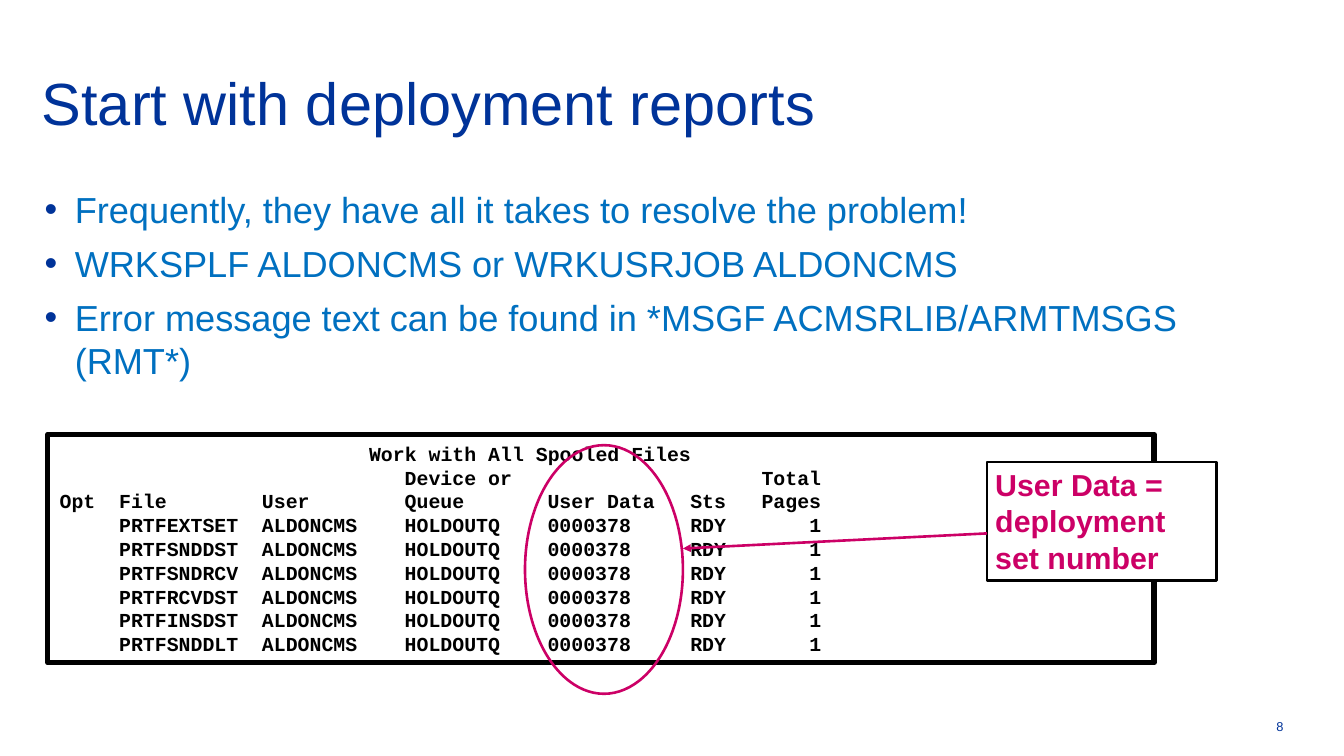
from pptx import Presentation, util as u
from pptx.dml.color import RGBColor
from pptx.enum import shapes, text
from pptx.oxml.ns import qn
from lxml import etree

NAVY, BLUE, PINK, BLACK, WHITE = "003399", "0070C0", "CC0066", "000000", "FFFFFF"
INSETS = {"margin_left": 0.14, "margin_right": 0.14, "margin_top": 0.07, "margin_bottom": 0.07}
CHARACTER = 17 * 0.6 / 72  # width of one Courier New letter at 17 pt, in inches
COLUMNS = [(5, "l"), (17, "l"), (29, "l"), (41, "l"), (53, "l"), (64, "r")]
FILES = ["PRTFEXTSET", "PRTFSNDDST", "PRTFSNDRCV", "PRTFRCVDST", "PRTFINSDST", "PRTFSNDDLT"]
BULLETS = [
    "Frequently, they have all it takes to resolve the problem!",
    "WRKSPLF ALDONCMS or WRKUSRJOB ALDONCMS",
    "Error message text can be found in *MSGF ACMSRLIB/ARMTMSGS (RMT*)",
]


def color(hex_value):
    return RGBColor.from_string(hex_value)


def set_font(paragraph, hex_value, **values):
    for name, value in values.items():
        setattr(paragraph.font, name, value)
    paragraph.font.color.rgb = color(hex_value)


def set_frame(shape, insets=None, anchor=text.MSO_ANCHOR.TOP):
    frame = shape.text_frame
    frame.word_wrap = True
    frame.vertical_anchor = anchor
    for name, value in (insets or {}).items():
        setattr(frame, name, u.Inches(value))
    return frame


def add_text_box(slide, box, **frame_values):
    return set_frame(slide.shapes.add_textbox(*map(u.Inches, box)), **frame_values)


def add_outline(slide, kind, box, line, width, fill=None):
    shape = slide.shapes.add_shape(kind, *map(u.Inches, box))
    shape.shadow.inherit = False
    if fill:
        shape.fill.solid()
        shape.fill.fore_color.rgb = color(fill)
    else:
        shape.fill.background()
    shape.line.color.rgb = color(line)
    shape.line.width = u.Pt(width)
    return shape


def add_tabs(paragraph, stops):
    tabs = etree.SubElement(paragraph._p.get_or_add_pPr(), qn("a:tabLst"))
    for column, align in stops:
        position = u.Inches(column * CHARACTER)
        etree.SubElement(tabs, qn("a:tab"), pos=str(position), algn=align)


def add_bullet(paragraph, hex_value):
    properties = paragraph._p.get_or_add_pPr()
    properties.set("marL", str(u.Inches(0.36)))
    properties.set("indent", str(u.Inches(-0.36)))
    bullet_color = etree.SubElement(properties, qn("a:buClr"))
    etree.SubElement(bullet_color, qn("a:srgbClr"), val=hex_value)
    etree.SubElement(properties, qn("a:buFont"), typeface="Arial")
    etree.SubElement(properties, qn("a:buChar"), char="•")


def add_title(slide, box):
    frame = add_text_box(slide, box, anchor=text.MSO_ANCHOR.MIDDLE)
    frame.text = "Start with deployment reports"
    set_font(frame.paragraphs[0], NAVY, name="Arial", size=u.Pt(51))


def add_bullets(slide, box):
    frame = add_text_box(slide, box, insets=INSETS)
    frame.text = "\n".join(BULLETS)
    for index, paragraph in enumerate(frame.paragraphs):
        paragraph.space_before = u.Pt(9 if index else 0)
        add_bullet(paragraph, NAVY)
        set_font(paragraph, BLUE, name="Arial", size=u.Pt(31))


def add_spooled_files(slide, box):
    shape = add_outline(slide, shapes.MSO_SHAPE.RECTANGLE, box, BLACK, 4.5, WHITE)
    frame = set_frame(shape, insets=INSETS, anchor=text.MSO_ANCHOR.MIDDLE)
    lines = [
        "\tWork with All Spooled Files",
        "\t\t\tDevice or\t\t\tTotal",
        "Opt\tFile\tUser\tQueue\tUser Data\tSts\tPages",
    ]
    lines += [f"\t{name}\tALDONCMS\tHOLDOUTQ\t0000378\tRDY\t1" for name in FILES]
    frame.text = "\n".join(lines)
    for index, paragraph in enumerate(frame.paragraphs):
        paragraph.alignment = text.PP_ALIGN.LEFT
        add_tabs(paragraph, COLUMNS if index else [(26, "l")])
        set_font(paragraph, BLACK, name="Courier New", size=u.Pt(17), bold=True)


def add_callout(slide, box, ellipse_box):
    # Ring around the User Data column
    add_outline(slide, shapes.MSO_SHAPE.OVAL, ellipse_box, PINK, 2.25)

    # Explanation
    shape = add_outline(slide, shapes.MSO_SHAPE.RECTANGLE, box, BLACK, 2.25, WHITE)
    frame = set_frame(shape)
    frame.text = "User Data = deployment set number"
    frame.paragraphs[0].alignment = text.PP_ALIGN.LEFT
    set_font(frame.paragraphs[0], PINK, name="Arial", size=u.Pt(26), bold=True)

    # Arrow from the explanation to the ring
    start = box[0], box[1] + 0.85
    end = ellipse_box[0] + ellipse_box[2], ellipse_box[1] + 1.23
    arrow = slide.shapes.add_connector(shapes.MSO_CONNECTOR.STRAIGHT, *map(u.Inches, start + end))
    arrow.line.color.rgb = color(PINK)
    arrow.line.width = u.Pt(2.25)
    etree.SubElement(arrow.line._get_or_add_ln(), qn("a:tailEnd"), type="triangle")
    etree.SubElement(arrow._element.spPr, qn("a:effectLst"))


def add_page_number(slide, box):
    frame = add_text_box(slide, box, insets=INSETS)
    frame.text = "8"
    frame.paragraphs[0].alignment = text.PP_ALIGN.RIGHT
    set_font(frame.paragraphs[0], NAVY, name="Arial", size=u.Pt(11))


def main():
    presentation = Presentation()
    presentation.slide_width, presentation.slide_height = u.Inches(16), u.Inches(9)
    slide = presentation.slides.add_slide(presentation.slide_layouts[6])
    add_page_number(slide, (14.77, 8.49, 0.65, 0.31))
    add_title(slide, (0.4, 0.59, 13.9, 1.24))
    add_bullets(slide, (0.39, 2.16, 13.92, 6.23))
    add_spooled_files(slide, (0.57, 5.17, 13.17, 2.72))
    add_callout(slide, (11.75, 5.5, 2.73, 1.41), (6.25, 5.3, 1.88, 2.96))
    presentation.save("out.pptx")


if __name__ == "__main__":
    main()
